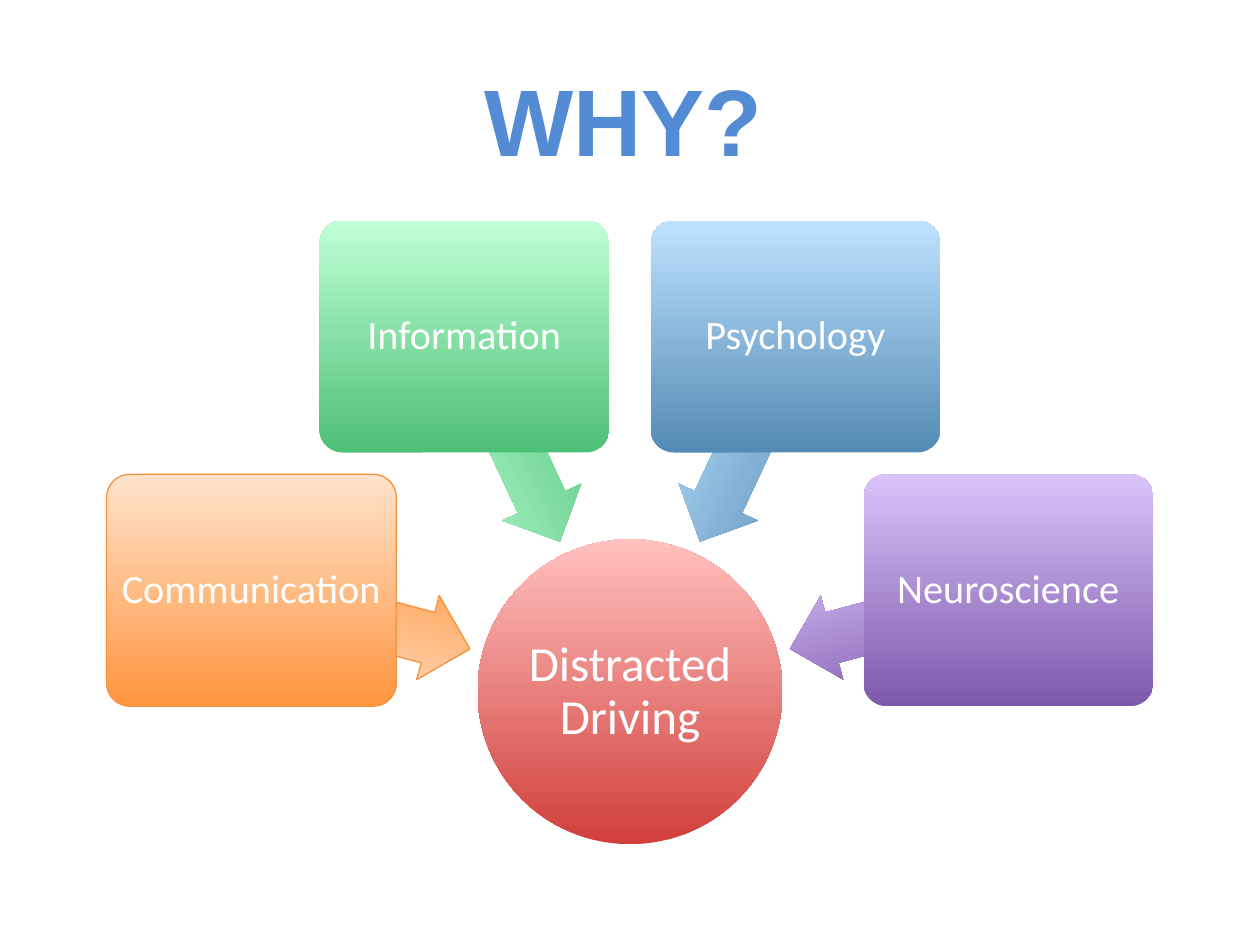
from dataclasses import dataclass
from math import cos, radians, sin

from pptx import Presentation
from pptx.dml.color import RGBColor
from pptx.enum.shapes import MSO_SHAPE as Preset
from pptx.enum.text import MSO_ANCHOR as Anchor, PP_ALIGN as Align
from pptx.shapes.autoshape import Shape
from pptx.slide import Slide
from pptx.util import Inches, Pt

WIDTH, HEIGHT = Inches(10), Inches(7.5)


@dataclass(frozen=True)
class Theme:
    heading_font: str = "Arial"
    body_font: str = "Calibri"
    heading: str = "538CD5"
    text: str = "FFFFFF"
    hub: tuple[str, str] = ("D13F3B", "FFC1BF")
    orange: tuple[str, str] = ("FF953F", "FFE3CB")
    green: tuple[str, str] = ("4DC077", "BFFFD5")
    blue: tuple[str, str] = ("538BB5", "BFE2FF")
    purple: tuple[str, str] = ("7D59AB", "DAC2FA")
    outline: str = "F6923F"
    heading_size: float = 54
    hub_size: float = 28
    cause_size: float = 23


@dataclass(frozen=True)
class Cause:
    label: str
    angle: int
    gradient: tuple[str, str]
    outline: str | None = None


@dataclass(frozen=True)
class Radial:
    """Lengths are shares of the slide width."""
    center: tuple[float, float] = (0.5, 0.549)
    hub: tuple[float, float] = (0.242, 0.242)
    box: tuple[float, float] = (0.23, 0.184)
    arrow: tuple[float, float] = (0.18, 0.069)
    box_radius: float = 0.311
    arrow_radius: float = 0.2215

    def point(self, angle: int, radius: float) -> tuple[float, float]:
        x, y = self.center
        return x + radius * cos(radians(angle)), y + radius * sin(radians(angle))


THEME = Theme()
RADIAL = Radial()
CAUSES = (
    Cause("Communication", 195, THEME.orange, THEME.outline),
    Cause("Information", 245, THEME.green),
    Cause("Psychology", 295, THEME.blue),
    Cause("Neuroscience", 345, THEME.purple),
)


def write_text(shape: Shape, text: str, *, size: float, font: str = THEME.body_font,
               color: str = THEME.text, bold: bool = False, inset: float = 0.05,
               anchor: Anchor = Anchor.MIDDLE, line_spacing: float = 0.9,
               space_after: float = 0) -> None:
    frame = shape.text_frame
    frame.word_wrap = True
    frame.vertical_anchor = anchor
    frame.margin_left = frame.margin_right = Inches(inset)
    frame.margin_top = frame.margin_bottom = Inches(inset)
    paragraph = frame.paragraphs[0]
    paragraph.alignment = Align.CENTER
    paragraph.line_spacing = line_spacing
    paragraph.space_after = Pt(space_after)
    run = paragraph.add_run()
    run.text = text
    run.font.name = font
    run.font.size = Pt(size)
    run.font.bold = bold
    run.font.color.rgb = RGBColor.from_string(color)


def add_centered(slide: Slide, preset: Preset, center: tuple[float, float],
                 size: tuple[float, float], gradient: tuple[str, str],
                 outline: str | None = None) -> Shape:
    (x, y), (width, height) = center, size
    shape = slide.shapes.add_shape(
        preset, *(round(share * WIDTH) for share in
                  (x - width / 2, y - height / 2, width, height)))
    shape.shadow.inherit = False
    shape.fill.gradient()
    shape.fill.gradient_angle = 90
    for stop, color in zip(shape.fill.gradient_stops, gradient):
        stop.color.rgb = RGBColor.from_string(color)
    if outline:
        shape.line.color.rgb = RGBColor.from_string(outline)
        shape.line.width = Pt(0.75)
    else:
        shape.line.fill.background()
    return shape


def add_title(slide: Slide, text: str) -> None:
    title = slide.shapes.add_textbox(*(round(share * length) for share, length in (
        (0.033, WIDTH), (0.05, HEIGHT), (0.924, WIDTH), (0.135, HEIGHT))))
    write_text(title, text, size=THEME.heading_size, font=THEME.heading_font,
               color=THEME.heading, bold=True, anchor=Anchor.TOP, line_spacing=1)
    title.text_frame.margin_top = Inches(0.12)


def add_hub(slide: Slide, text: str) -> None:
    hub = add_centered(slide, Preset.OVAL, RADIAL.center, RADIAL.hub, THEME.hub)
    write_text(hub, text, size=THEME.hub_size, inset=0.02, space_after=9.8)


def add_cause(slide: Slide, cause: Cause) -> None:
    arrow = add_centered(slide, Preset.LEFT_ARROW,
                         RADIAL.point(cause.angle, RADIAL.arrow_radius),
                         RADIAL.arrow, cause.gradient, cause.outline)
    arrow.rotation = cause.angle
    arrow.adjustments[0] = 0.6
    arrow.adjustments[1] = 0.5
    box = add_centered(slide, Preset.ROUNDED_RECTANGLE,
                       RADIAL.point(cause.angle, RADIAL.box_radius),
                       RADIAL.box, cause.gradient, cause.outline)
    box.adjustments[0] = 0.1
    write_text(box, cause.label, size=THEME.cause_size, space_after=8.1)


def main() -> None:
    presentation = Presentation()
    presentation.slide_width, presentation.slide_height = WIDTH, HEIGHT
    slide = presentation.slides.add_slide(presentation.slide_layouts[6])
    add_title(slide, "WHY?")
    add_hub(slide, "Distracted Driving")
    for cause in CAUSES:
        add_cause(slide, cause)
    presentation.save("out.pptx")


if __name__ == "__main__":
    main()
